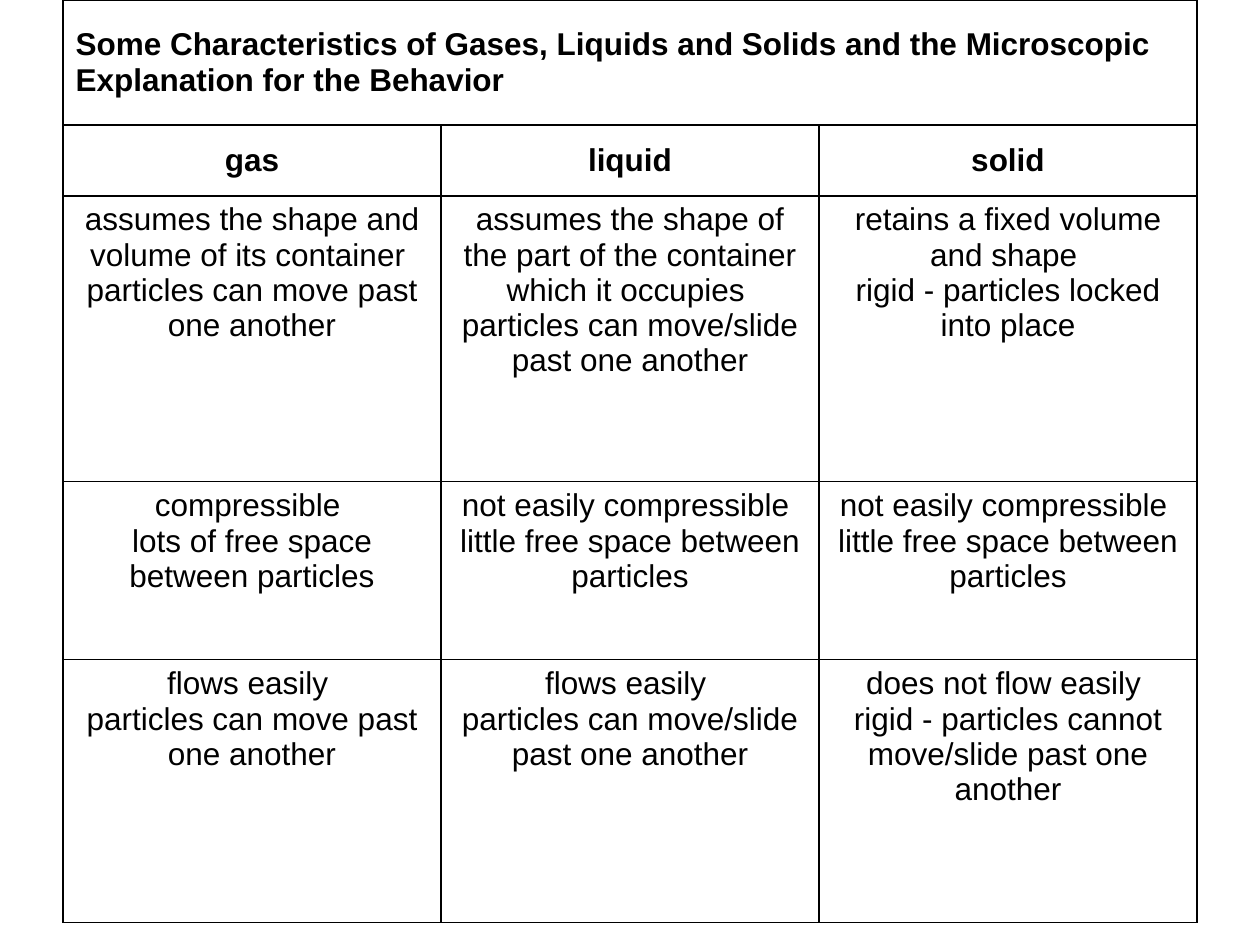
"""Build a slide with a table comparing gases, liquids and solids."""
from dataclasses import dataclass

from lxml import etree
from pptx import Presentation
from pptx import util as u
from pptx.dml.color import RGBColor
from pptx.enum import text as t
from pptx.oxml.ns import qn
from pptx.table import _Cell as Cell

SCALE = 914400 / 126


@dataclass(frozen=True)
class Theme:
    font: str = "Arial"
    size: float = 18
    ink: str = "000000"
    line: float = 0.75


@dataclass(frozen=True)
class Row:
    high: int
    cells: tuple[str, ...]
    head: bool = False


THEME = Theme()
LEFT, TOP, WIDE = 63, 0, 378
TITLE = (
    "Some Characteristics of Gases, Liquids and Solids "
    "and the Microscopic Explanation for the Behavior"
)
TIGHT = "not easily compressible \vlittle free space between particles"
ROWS = (
    Row(125, (TITLE,), head=True),
    Row(71, ("gas", "liquid", "solid"), head=True),
    Row(286, (
        "assumes the shape and volume of its container \vparticles can move past one another",
        "assumes the shape of the part of the container which it occupies \v"
        "particles can move/slide past one another",
        "retains a fixed volume and shape \vrigid - particles locked into place",
    )),
    Row(178, ("compressible \vlots of free space between particles", TIGHT, TIGHT)),
    Row(263, (
        "flows easily \vparticles can move past one another",
        "flows easily \vparticles can move/slide past one another",
        "does not flow easily \vrigid - particles cannot move/slide past one another",
    )),
)


def px(n: int) -> u.Emu:
    """Turn pixels into EMU."""
    return u.Emu(round(n * SCALE))


def edge(cell: Cell) -> None:
    """Draw the four borders of a cell and leave it unfilled."""
    props = cell._tc.get_or_add_tcPr()
    for side in ("lnL", "lnR", "lnT", "lnB"):
        line = etree.SubElement(props, qn(f"a:{side}"), w=str(u.Pt(THEME.line)))
        fill = etree.SubElement(line, qn("a:solidFill"))
        etree.SubElement(fill, qn("a:srgbClr"), val=THEME.ink)
    cell.fill.background()


def write(cell: Cell, words: str, *, bold: bool, align: t.PP_ALIGN, anchor: t.MSO_ANCHOR) -> None:
    """Put formatted text in a cell."""
    cell.vertical_anchor = anchor
    para = cell.text_frame.paragraphs[0]
    para.text = words
    para.alignment = align
    for run in para.runs:
        font = run.font
        font.name, font.size, font.bold = THEME.font, u.Pt(THEME.size), bold
        font.color.rgb = RGBColor.from_string(THEME.ink)


def main() -> None:
    """Lay out the table and save the deck."""
    deck = Presentation()
    deck.slide_width, deck.slide_height = px(1260), px(945)
    slide = deck.slides.add_slide(deck.slide_layouts[6])
    cols = max(len(row.cells) for row in ROWS)
    high = sum(row.high for row in ROWS)
    grid = slide.shapes.add_table(
        len(ROWS), cols, px(LEFT), px(TOP), px(WIDE * cols), px(high)
    ).table
    grid.first_row = grid.horz_banding = False
    for col in grid.columns:
        col.width = px(WIDE)
    for cell in grid.iter_cells():
        edge(cell)
    grid.cell(0, 0).merge(grid.cell(0, cols - 1))
    for r, row in enumerate(ROWS):
        grid.rows[r].height = px(row.high)
        align = t.PP_ALIGN.CENTER if len(row.cells) > 1 else t.PP_ALIGN.LEFT
        anchor = t.MSO_ANCHOR.MIDDLE if row.head else t.MSO_ANCHOR.TOP
        for c, words in enumerate(row.cells):
            write(grid.cell(r, c), words, bold=row.head, align=align, anchor=anchor)
    deck.save("out.pptx")


if __name__ == "__main__":
    main()
